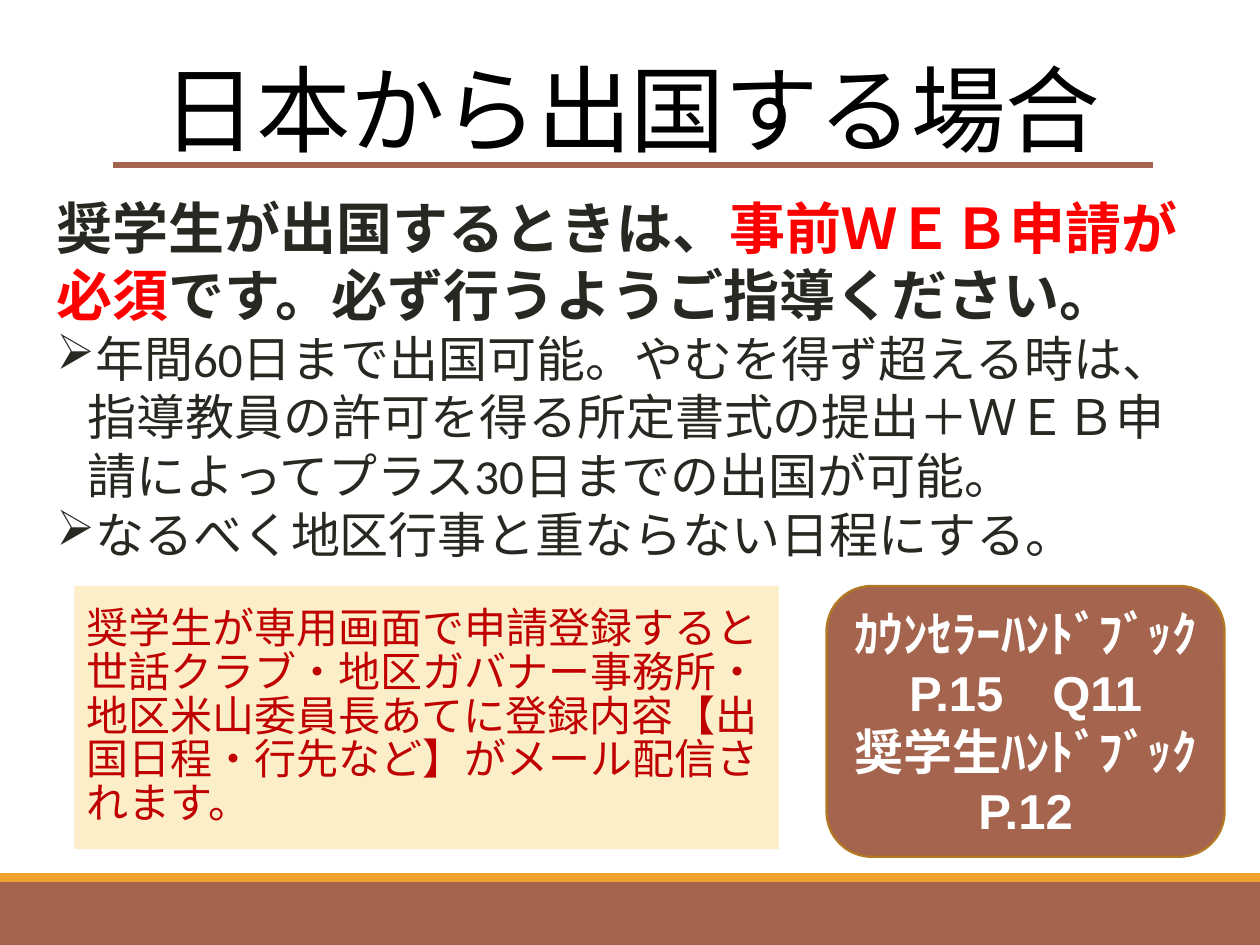
from pptx import Presentation
from pptx.util import Pt
from pptx.dml.color import RGBColor as RGB
from pptx.enum.shapes import MSO_SHAPE as Kind, MSO_CONNECTOR as Link
from pptx.enum.text import PP_ALIGN as Align, MSO_ANCHOR as Anchor
from pptx.oxml.ns import qn
from lxml.etree import SubElement as Sub

BROWN, GOLD, DARK = "A5644E", "F0A22E", "282823"

deck = Presentation()
deck.slide_width, deck.slide_height = Pt(720), Pt(540)
slide = deck.slides.add_slide(deck.slide_layouts[6])


def add_box(kind, x, y, w, h, fill=None):
    """Add a shape, or a plain text box when kind is None."""
    area = Pt(x), Pt(y), Pt(w), Pt(h)
    if kind is None:
        box = slide.shapes.add_textbox(*area)
    else:
        box = slide.shapes.add_shape(kind, *area)
        box.shadow.inherit = False
        box.fill.solid()
        box.fill.fore_color.rgb = RGB.from_string(fill)
        box.line.fill.background()
    box.text_frame.word_wrap = True
    box.text_frame.vertical_anchor = Anchor.MIDDLE
    return box


def set_text(par, text, size, color, name="Calibri", bold=False, align=Align.LEFT):
    par.text = text
    par.alignment = align
    font = par.font
    font.size, font.name, font.bold = Pt(size), name, bold
    font.color.rgb = RGB.from_string(color)


# Footer bands
add_box(Kind.RECTANGLE, 0, 504, 720, 36, BROWN)
add_box(Kind.RECTANGLE, 0, 499, 720, 5, GOLD)

# Title and its rule
rule = slide.shapes.add_connector(Link.STRAIGHT, Pt(64.8), Pt(94.3), Pt(658.8), Pt(94.3))
rule.line.color.rgb = RGB.from_string(BROWN)
rule.line.width = Pt(3)
Sub(rule.element.spPr, qn("a:effectLst"))

title = add_box(None, 0.7, 20.2, 720, 82.8).text_frame.paragraphs[0]
set_text(title, "日本から出国する場合", 54, "000000", align=Align.CENTER)
title.runs[0].font.element.set("spc", "-50") if hasattr(title.runs[0].font, "element") \
    else title.runs[0]._r.get_or_add_rPr().set("spc", "-50")

# Handbook reference
book = add_box(Kind.ROUNDED_RECTANGLE, 472.3, 334.8, 227.5, 154.8, BROWN)
book.line.color.rgb = RGB.from_string("B27822")
book.line.width = Pt(1.25)
frame = book.text_frame
frame.margin_left = frame.margin_right = frame.margin_top = frame.margin_bottom = 0
lines = ["ｶｳﾝｾﾗｰﾊﾝﾄﾞﾌﾞｯｸ", "P.15　Q11", "奨学生ﾊﾝﾄﾞﾌﾞｯｸ", "P.12"]
for i, line in enumerate(lines):
    par = frame.add_paragraph() if i else frame.paragraphs[0]
    set_text(par, line, 28, "FFFFFF", "Arial", True, Align.CENTER)

# Main message with the key words in red
frame = add_box(None, 25.2, 105.8, 674.6, 221).text_frame
lead = frame.paragraphs[0]
set_text(lead, "奨学生が出国するときは、", 32, DARK, bold=True)
key = lead.add_run()
key.text = "事前ＷＥＢ申請が必須"
key.font.color.rgb = RGB.from_string("FF0000")
lead.add_run().text = "です。必ず行うようご指導ください。"

# Bulleted rules
rules = [
    "年間60日まで出国可能。やむを得ず超える時は、指導教員の許可を得る所定書式の提出＋ＷＥＢ申請によってプラス30日までの出国が可能。",
    "なるべく地区行事と重ならない日程にする。",
]
for text in rules:
    par = frame.add_paragraph()
    set_text(par, text, 28, DARK)
    props = par._p.get_or_add_pPr()
    props.set("marL", str(Pt(18)))
    props.set("indent", str(-Pt(18)))
    mark = props.makeelement(qn("a:buChar"), {"char": "➢"})
    props.insert(0, mark)

# Mail notice
note = add_box(Kind.RECTANGLE, 42.5, 334.8, 402.5, 150.5, "FBEEC9").text_frame.paragraphs[0]
set_text(
    note,
    "奨学生が専用画面で申請登録すると世話クラブ・地区ガバナー事務所・地区米山委員長あてに登録内容【出国日程・行先など】がメール配信されます。",
    24, "C00000",
)
note.line_spacing = Pt(25)

deck.save("out.pptx")
